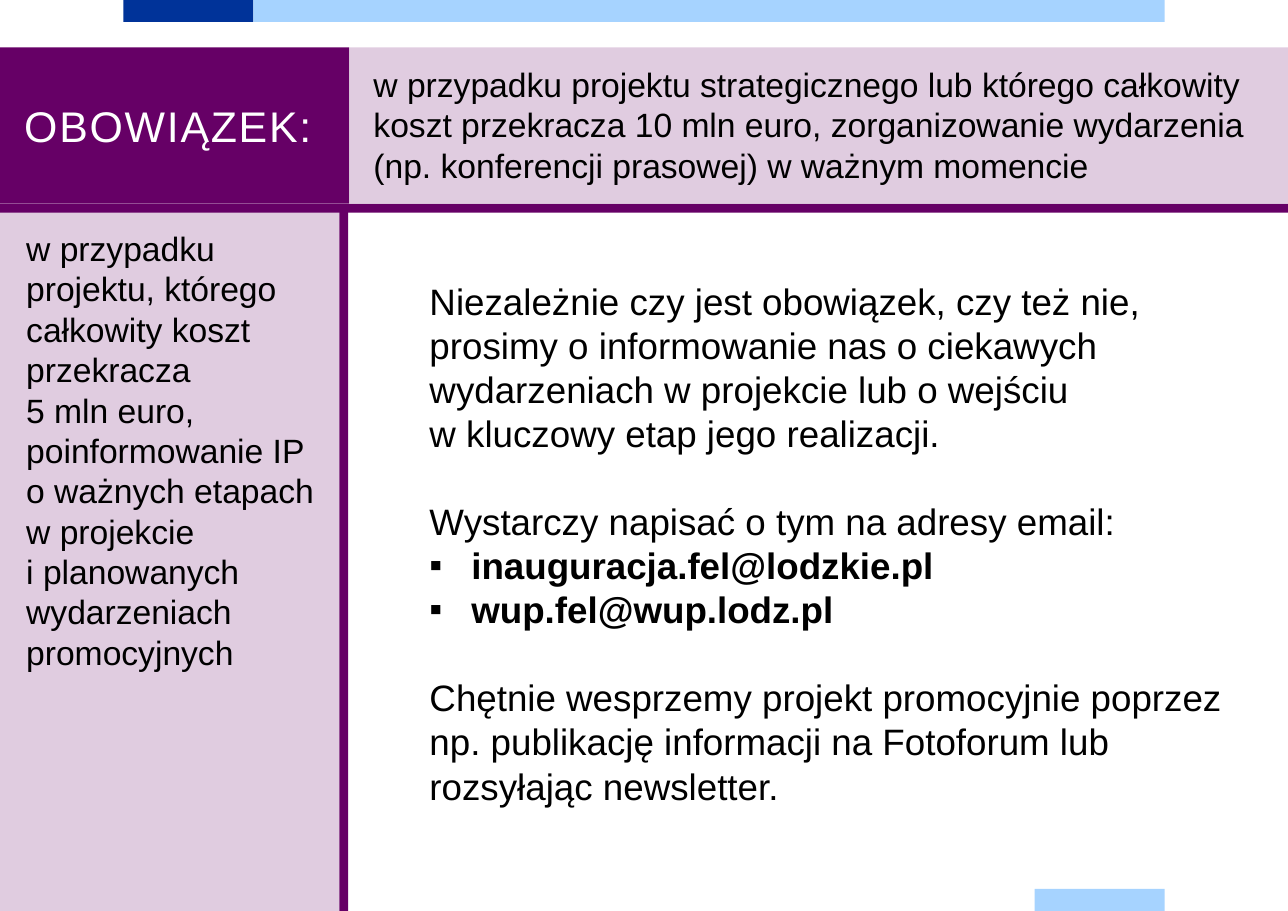
from lxml.etree import SubElement
from pptx import Presentation
from pptx.dml.color import RGBColor
from pptx.enum.shapes import MSO_SHAPE as Shape
from pptx.enum.text import MSO_ANCHOR as Anchor
from pptx.oxml.ns import qn
from pptx.util import Inches, Pt

PURPLE = RGBColor(0x66, 0x00, 0x66)
NAVY = RGBColor(0x00, 0x33, 0x99)
SKY = RGBColor(0xA6, 0xD3, 0xFF)
WHITE = RGBColor(0xFF, 0xFF, 0xFF)
BLACK = RGBColor(0x00, 0x00, 0x00)

WIDTH, HEIGHT = 11.69, 8.27
HEADER_TOP, HEADER_HEIGHT = 0.43, 1.42
HEADER_BOTTOM = HEADER_TOP + HEADER_HEIGHT
SIDE_TOP, SIDE_HEIGHT = 1.91, 6.36
TITLE_WIDTH = 3.17
RULE = 0.08
BLANK_LINE = 28.8

HEADER_TEXT = (
    "w przypadku projektu strategicznego lub którego całkowity koszt przekracza "
    "10 mln euro, zorganizowanie wydarzenia (np. konferencji prasowej) w ważnym momencie"
)
SIDE_TEXT = (
    "w przypadku projektu, którego całkowity koszt przekracza \n"
    "5 mln euro, poinformowanie IP o ważnych etapach w projekcie \n"
    "i planowanych wydarzeniach promocyjnych"
)
REQUEST = (
    "Niezależnie czy jest obowiązek, czy też nie, prosimy o informowanie nas "
    "o ciekawych wydarzeniach w projekcie lub o wejściu \n"
    "w kluczowy etap jego realizacji."
)
INVITATION = "Wystarczy napisać o tym na adresy email:"
EMAILS = ["inauguracja.fel@lodzkie.pl", "wup.fel@wup.lodz.pl"]
SUPPORT = (
    "Chętnie wesprzemy projekt promocyjnie poprzez np. publikację informacji "
    "na Fotoforum lub rozsyłając newsletter."
)


def add_block(slide, left, top, width, height, color, opacity=100):
    block = slide.shapes.add_shape(
        Shape.RECTANGLE, Inches(left), Inches(top), Inches(width), Inches(height)
    )
    block.shadow.inherit = False
    block.line.fill.background()
    block.fill.solid()
    block.fill.fore_color.rgb = color
    if opacity < 100:
        tint = block.fill._xPr.find(f".//{qn('a:srgbClr')}")
        SubElement(tint, qn("a:alpha"), val=str(opacity * 1000))


def add_text_frame(slide, left, top, width, height, inset_x=0.1, inset_y=0.05):
    box = slide.shapes.add_textbox(
        Inches(left), Inches(top), Inches(width), Inches(height)
    )
    frame = box.text_frame
    frame.word_wrap = True
    frame.vertical_anchor = Anchor.TOP
    frame.margin_left = frame.margin_right = Inches(inset_x)
    frame.margin_top = frame.margin_bottom = Inches(inset_y)
    return frame


def write(paragraph, text, size, color=BLACK, bold=False):
    for index, line in enumerate(text.split("\n")):
        if index:
            paragraph.add_line_break()
        run = paragraph.add_run()
        run.text = line
        run.font.name = "Arial"
        run.font.size = Pt(size)
        run.font.bold = bold
        run.font.color.rgb = color


def add_bullet(paragraph):
    properties = paragraph._p.get_or_add_pPr()
    indent = Inches(0.38)
    properties.set("marL", str(indent))
    properties.set("indent", str(-indent))
    SubElement(properties, qn("a:buFont"), typeface="Arial")
    SubElement(properties, qn("a:buChar"), char="▪")


def add_title(slide):
    title = add_text_frame(slide, 0.22, 0.87, 2.73, 0.55, 0, 0).paragraphs[0]
    title.line_spacing = Pt(36)
    write(title, "OBOWIĄZEK:", 28, WHITE)
    title.runs[0].font._element.set("spc", "120")


def add_message(slide):
    frame = add_text_frame(slide, 3.8, 2.48, 7.4, 4.95)
    write(frame.paragraphs[0], REQUEST, 24)
    invitation = frame.add_paragraph()
    invitation.space_before = Pt(BLANK_LINE)
    write(invitation, INVITATION, 24)
    for email in EMAILS:
        address = frame.add_paragraph()
        add_bullet(address)
        write(address, email, 24, bold=True)
    support = frame.add_paragraph()
    support.space_before = Pt(BLANK_LINE)
    write(support, SUPPORT, 24)


def main():
    deck = Presentation()
    deck.slide_width, deck.slide_height = Inches(WIDTH), Inches(HEIGHT)
    slide = deck.slides.add_slide(deck.slide_layouts[6])

    add_block(slide, 1.12, 0, 1.18, 0.2, NAVY)
    add_block(slide, 2.3, 0, 8.27, 0.2, SKY)
    add_block(slide, 9.39, 8.07, 1.18, 0.2, SKY)

    add_block(slide, -0.01, SIDE_TOP, 3.09, SIDE_HEIGHT, PURPLE, 20)
    add_block(slide, 0, HEADER_TOP, TITLE_WIDTH, HEADER_HEIGHT, PURPLE)
    add_title(slide)

    add_block(slide, TITLE_WIDTH, HEADER_TOP, WIDTH - TITLE_WIDTH, HEADER_HEIGHT, PURPLE, 20)
    header = add_text_frame(slide, 3.39, 0.58, 8.37, 1.18, 0, 0)
    write(header.paragraphs[0], HEADER_TEXT, 22)
    add_block(slide, 0, HEADER_BOTTOM, WIDTH, RULE, PURPLE)

    side = add_text_frame(slide, 0.14, 2.02, 2.94, 4.17)
    write(side.paragraphs[0], SIDE_TEXT, 22)
    add_block(slide, 3.08, SIDE_TOP, RULE, SIDE_HEIGHT, PURPLE)
    add_message(slide)

    deck.save("out.pptx")


if __name__ == "__main__":
    main()
